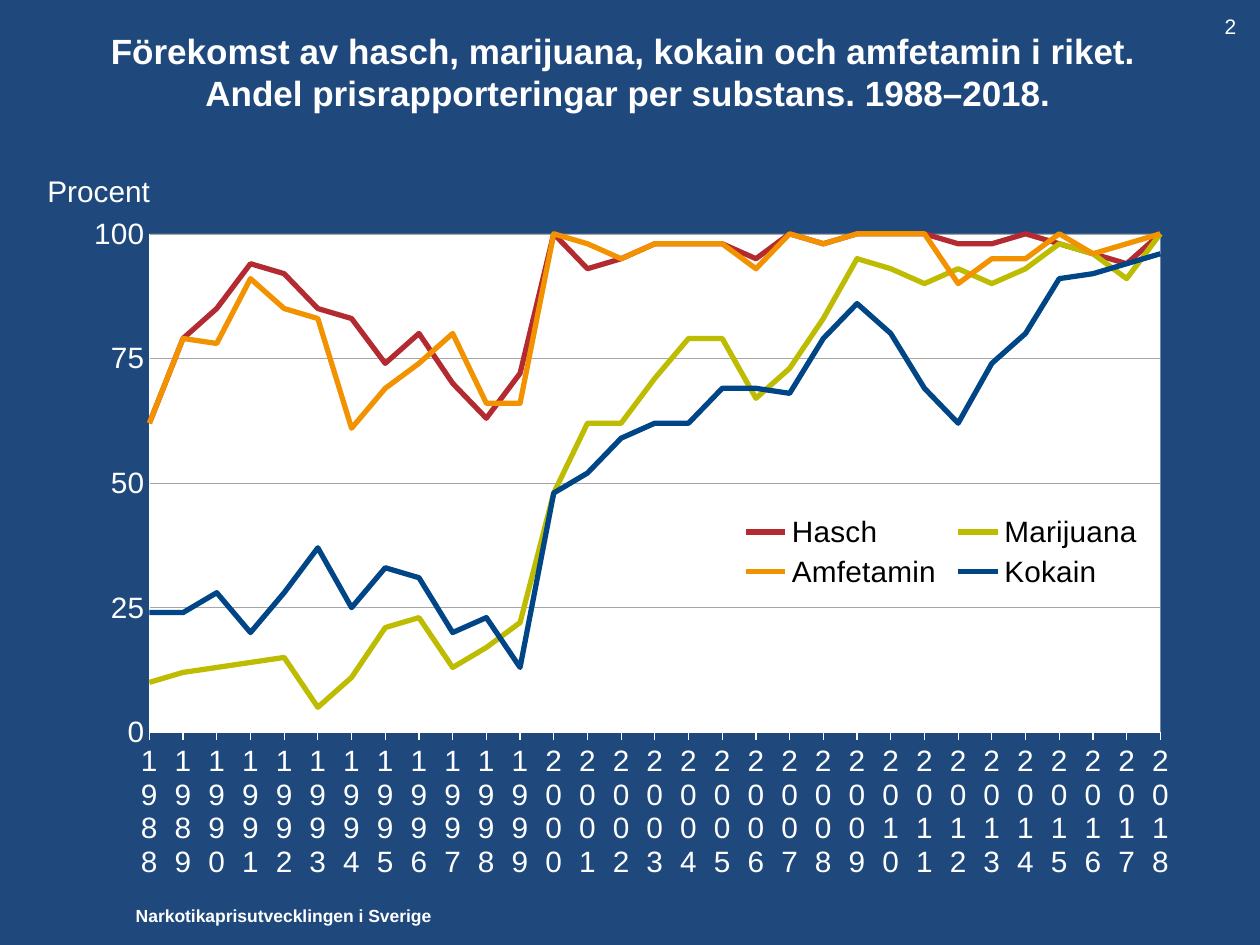
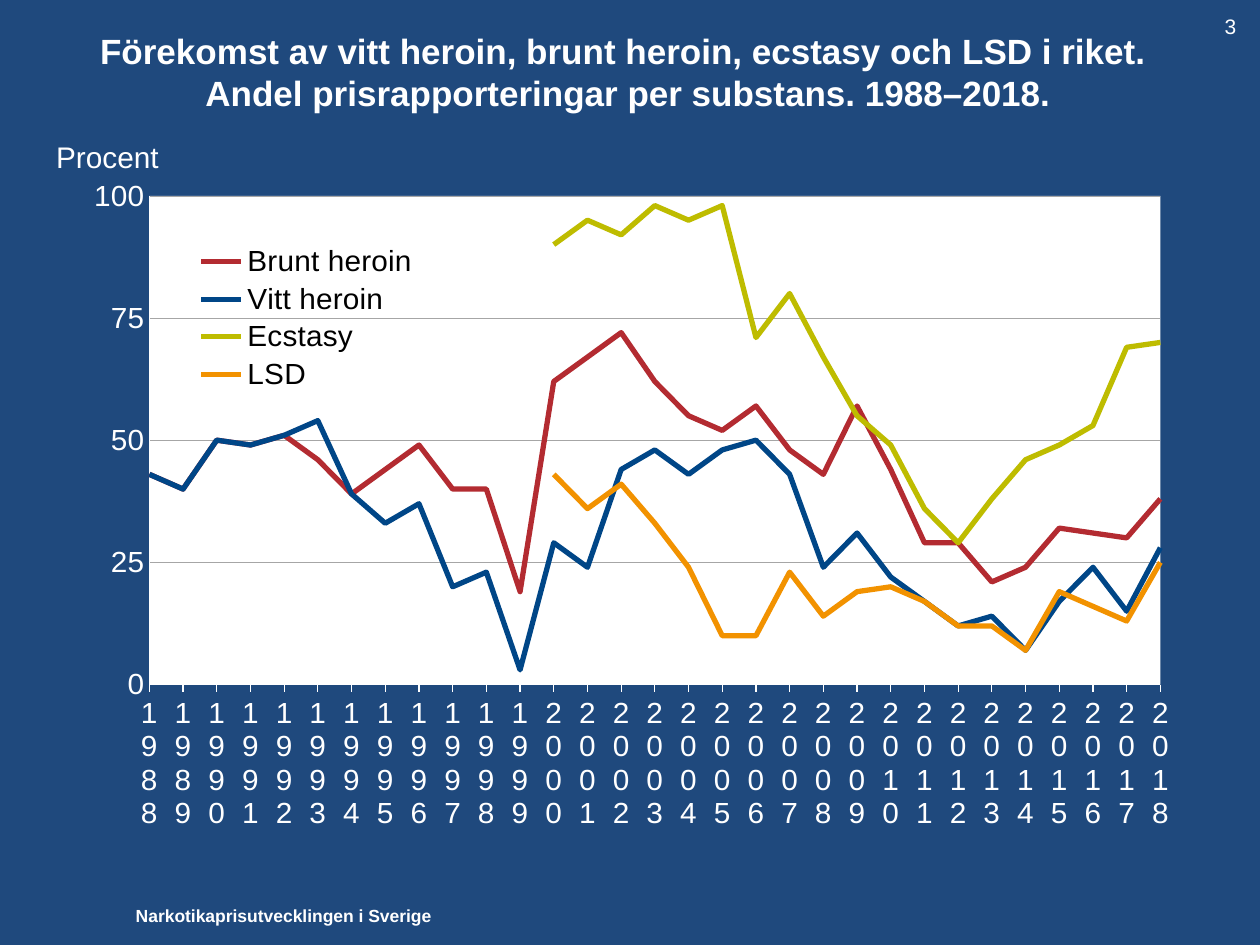
from lxml import etree
from pptx import Presentation
from pptx.chart.data import CategoryChartData as Data
from pptx.dml.color import RGBColor as RGB
from pptx.enum.chart import XL_CHART_TYPE as Kind, XL_LEGEND_POSITION as Side
from pptx.enum.chart import XL_TICK_MARK as Tick
from pptx.enum.text import MSO_ANCHOR as Anchor, PP_ALIGN as Align
from pptx.oxml.ns import qn
from pptx.util import Pt

# Content: each line runs to the last year, and may start late
FOOT = "Narkotikaprisutvecklingen i Sverige"
UNIT = "Procent"
HEAD = "Förekomst av {} i riket. \vAndel prisrapporteringar per substans. 1988–2018."
YEARS = [str(year) for year in range(1988, 2019)]

PAGES = [
    {
        "num": "2",
        "drugs": "hasch, marijuana, kokain och amfetamin",
        "unit": (20, 95),
        "chart": (122.4, 380),
        "plot": (0.03, 0.76),
        "key": (0.6, 0.45, 0.37, 0.13),
        "side": Side.RIGHT,
        "lines": [
            ("Hasch", "red",
             "62 79 85 94 92 85 83 74 80 70 63 72 100 93 95 98 "
             "98 98 95 100 98 100 100 100 98 98 100 98 96 94 100"),
            ("Marijuana", "lime",
             "10 12 13 14 15 5 11 21 23 13 17 22 48 62 62 71 "
             "79 79 67 73 83 95 93 90 93 90 93 98 96 91 100"),
            ("Amfetamin", "gold",
             "62 79 78 91 85 83 61 69 74 80 66 66 100 98 95 98 "
             "98 98 93 100 98 100 100 100 90 95 95 100 96 98 100"),
            ("Kokain", "blue",
             "24 24 28 20 28 37 25 33 31 20 23 13 48 52 59 62 "
             "62 69 69 68 79 86 80 69 62 74 80 91 92 94 96"),
        ],
    },
    {
        "num": "3",
        "drugs": "vitt heroin, brunt heroin, ecstasy och LSD",
        "unit": (25, 75.6),
        "chart": (97.2, 377),
        "plot": (0.04, 0.76),
        "key": (0.12, 0.11, 0.2, 0.24),
        "side": Side.TOP,
        "lines": [
            ("Brunt heroin", "red",
             "43 40 50 49 51 46 39 44 49 40 40 19 62 67 72 62 "
             "55 52 57 48 43 57 44 29 29 21 24 32 31 30 38"),
            ("Vitt heroin", "blue",
             "43 40 50 49 51 54 39 33 37 20 23 3 29 24 44 48 "
             "43 48 50 43 24 31 22 17 12 14 7 17 24 15 28"),
            ("Ecstasy", "lime",
             "90 95 92 98 95 98 71 80 67 55 49 36 29 38 46 49 53 69 70"),
            ("LSD", "gold",
             "43 36 41 33 24 10 10 23 14 19 20 17 12 12 7 19 16 13 25"),
        ],
    },
]

# Shared look
HUES = {"back": "1F497D", "white": "FFFFFF", "black": "000000", "grid": "A6A6A6",
        "red": "B32B31", "lime": "BEBC00", "gold": "F29200", "blue": "004687"}
FONTS = {
    "title": {"size": Pt(20), "bold": True},
    "foot": {"size": Pt(10), "bold": True},
    "num": {"size": Pt(12), "bold": False},
    "label": {"size": Pt(17), "bold": False},
}
SCALE = {"minimum_scale": 0, "maximum_scale": 100, "major_unit": 25,
         "has_major_gridlines": True, "major_tick_mark": Tick.NONE}


def hue(name):
    return RGB.from_string(HUES[name])


def assign(item, vals):
    for name, val in vals.items():
        setattr(item, name, val)


def style(font, kind, color="white"):
    assign(font, {"name": "Arial", **FONTS[kind]})
    font.color.rgb = hue(color)


def stroke(line, color, width):
    line.color.rgb = hue(color)
    line.width = Pt(width)


def write(slide, text, box, kind, wrap=False, align=Align.LEFT, anchor=Anchor.TOP):
    frame = slide.shapes.add_textbox(*map(Pt, box)).text_frame
    assign(frame, {"word_wrap": wrap, "vertical_anchor": anchor})
    para = frame.paragraphs[0]
    para.text, para.alignment = text, align
    for run in para.runs:
        style(run.font, kind)


def series(text):
    """Values for all years, with gaps before the first report."""
    vals = [int(val) for val in text.split()]
    return [None] * (len(YEARS) - len(vals)) + vals


def layout(box, inner=False):
    """Manual layout, as fractions of the chart."""
    root = etree.Element(qn("c:layout"))
    man = etree.SubElement(root, qn("c:manualLayout"))
    vals = [("layoutTarget", "inner")] if inner else []
    vals += [("xMode", "edge"), ("yMode", "edge"), *zip("xywh", box)]
    for tag, val in vals:
        etree.SubElement(man, qn("c:" + tag)).set("val", str(val))
    return root


def draw(slide, page):
    data = Data(number_format="0")
    data.categories = YEARS
    for name, _, text in page["lines"]:
        data.add_series(name, series(text))
    top, high = page["chart"]
    chart = slide.shapes.add_chart(
        Kind.LINE, Pt(34), Pt(top), Pt(642), Pt(high), data).chart
    chart.has_title = False
    style(chart.font, "label")

    # Lines
    chart.plots[0].vary_by_categories = False
    for line, (_, color, _) in zip(chart.plots[0].series, page["lines"]):
        line.smooth = False
        stroke(line.format.line, color, 3)

    # Axes
    cat, val = chart.category_axis, chart.value_axis
    assign(val, SCALE)
    cat.major_tick_mark = Tick.OUTSIDE
    for axis, width in ((cat, 0.75), (val, 0.25)):
        style(axis.tick_labels.font, "label")
        stroke(axis.format.line, "white", width)
    assign(val.tick_labels, {"number_format": "0", "number_format_is_linked": False})
    stroke(val.major_gridlines.format.line, "grid", 0.25)
    body = cat._element.find(".//" + qn("a:bodyPr"))
    body.set("rot", "0")
    body.set("vert", "horz")
    cross = val._element.find(qn("c:crossBetween"))
    if cross is None:
        cross = etree.Element(qn("c:crossBetween"))
        val._element.find(qn("c:crosses")).addnext(cross)
    cross.set("val", "midCat")

    # Plot area
    area = chart._chartSpace.find(".//" + qn("c:plotArea"))
    for old in area.findall(qn("c:layout")):
        area.remove(old)
    down, tall = page["plot"]
    area.insert(0, layout((0.08, down, 0.9, tall), inner=True))
    fill = etree.SubElement(etree.SubElement(area, qn("c:spPr")), qn("a:solidFill"))
    etree.SubElement(fill, qn("a:srgbClr")).set("val", HUES["white"])

    # Legend
    chart.has_legend = True
    key = chart.legend
    assign(key, {"position": page["side"], "include_in_layout": False})
    style(key.font, "label", "black")
    for old in key._element.findall(qn("c:layout")):
        key._element.remove(old)
    key._element.find(qn("c:legendPos")).addnext(layout(page["key"]))


def main():
    deck = Presentation()
    assign(deck, {"slide_width": Pt(720), "slide_height": Pt(540)})
    back = deck.slide_master.background.fill
    back.solid()
    back.fore_color.rgb = hue("back")
    for page in PAGES:
        slide = deck.slides.add_slide(deck.slide_layouts[6])
        write(slide, FOOT, (70.5, 513.4, 186, 19.4), "foot")
        write(slide, HEAD.format(page["drugs"]), (15, 5, 688, 72), "title",
              True, Align.CENTER, Anchor.MIDDLE)
        draw(slide, page)
        write(slide, page["num"], (692.7, 4.3, 26, 21.6), "num")
        write(slide, UNIT, (*page["unit"], 73.4, 28), "label", anchor=Anchor.MIDDLE)
    deck.save("out.pptx")


if __name__ == "__main__":
    main()
